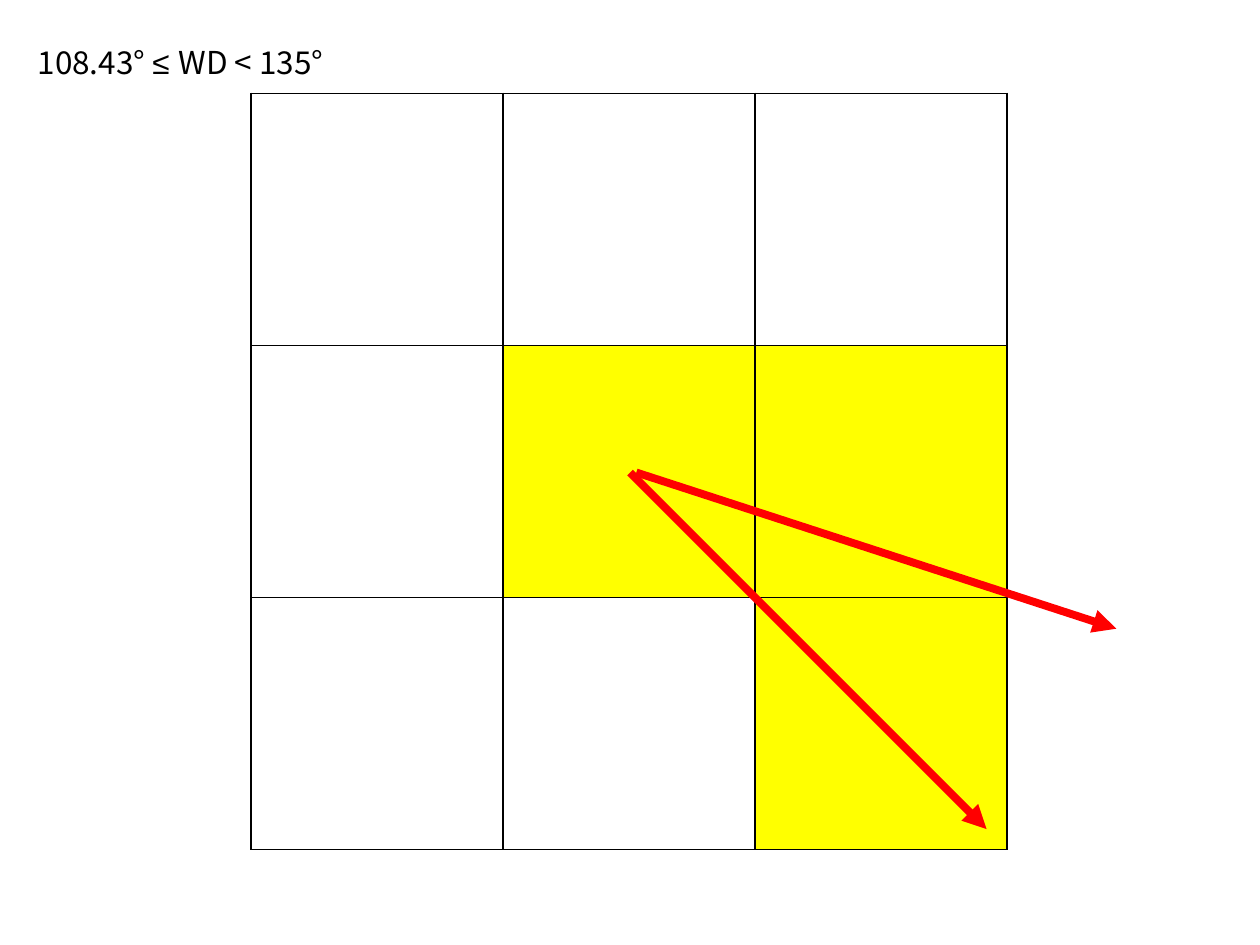
from dataclasses import dataclass

from lxml.etree import SubElement
from pptx import Presentation
from pptx.dml.color import RGBColor
from pptx.enum.shapes import MSO_CONNECTOR
from pptx.enum.text import MSO_AUTO_SIZE
from pptx.oxml.ns import qn
from pptx.util import Inches, Pt


@dataclass(frozen=True)
class Theme:
    ink: str = "000000"
    highlight: str = "FFFF00"
    arrow: str = "FF0000"
    text_font: str = "Noto Sans CJK KR"
    symbol_font: str = "Arial"
    text_size: float = 18
    border_width: float = 1
    arrow_width: float = 4.5


class SlideBuilder:
    """Draws on one slide; one grid column or row is one inch."""

    def __init__(self, slide, theme):
        self.shapes = slide.shapes
        self.theme = theme

    def cell_grid(self, col, row, count, cell_size, highlighted):
        side = Inches(count * cell_size)
        frame = self.shapes.add_table(count, count, Inches(col), Inches(row), side, side)
        table = frame.table
        table.first_row = table.horz_banding = False
        for r in range(count):
            for c in range(count):
                cell = table.cell(r, c)
                self.border(cell)
                if (r, c) in highlighted:
                    cell.fill.solid()
                    cell.fill.fore_color.rgb = RGBColor.from_string(self.theme.highlight)
                else:
                    cell.fill.background()

    def border(self, cell):
        properties = cell._tc.get_or_add_tcPr()
        for side in ("a:lnL", "a:lnR", "a:lnT", "a:lnB"):
            edge = SubElement(properties, qn(side), w=str(Pt(self.theme.border_width)))
            fill = SubElement(edge, qn("a:solidFill"))
            SubElement(fill, qn("a:srgbClr"), val=self.theme.ink)

    def label(self, col, row, width, height, pieces):
        box = self.shapes.add_textbox(Inches(col), Inches(row), Inches(width), Inches(height))
        box.text_frame.word_wrap = False
        box.text_frame.auto_size = MSO_AUTO_SIZE.SHAPE_TO_FIT_TEXT
        paragraph = box.text_frame.paragraphs[0]
        paragraph.font.size = Pt(self.theme.text_size)
        paragraph.font.color.rgb = RGBColor.from_string(self.theme.ink)
        for text, font in pieces:
            run = paragraph.add_run()
            run.text = text
            run.font.name = font
            SubElement(run.font._element, qn("a:ea"), typeface=self.theme.text_font)

    def arrow(self, start, end):
        ends = [Inches(length) for length in (*start, *end)]
        connector = self.shapes.add_connector(MSO_CONNECTOR.STRAIGHT, *ends)
        connector.line.color.rgb = RGBColor.from_string(self.theme.arrow)
        connector.line.width = Pt(self.theme.arrow_width)
        SubElement(connector.line._get_or_add_ln(), qn("a:tailEnd"), type="triangle")
        SubElement(connector._element.spPr, qn("a:effectLst"))


def main():
    presentation = Presentation()
    presentation.slide_width, presentation.slide_height = Inches(10), Inches(7.5)
    theme = Theme()
    builder = SlideBuilder(presentation.slides.add_slide(presentation.slide_layouts[6]), theme)

    # Cells around the centre, with those in the wind sector highlighted
    builder.cell_grid(1.99, 0.74, count=3, cell_size=2, highlighted={(1, 1), (1, 2), (2, 2)})

    # Range of wind directions
    builder.label(0.2, 0.29, 2.64, 0.4, [
        ("108.43° ", theme.text_font),
        ("≤ ", theme.symbol_font),
        ("WD < 135°", theme.text_font),
    ])

    # Limits of the sector
    builder.arrow((5, 3.75), (7.83, 6.58))
    builder.arrow((5.05, 3.75), (8.86, 4.99))

    presentation.save("out.pptx")


if __name__ == "__main__":
    main()
